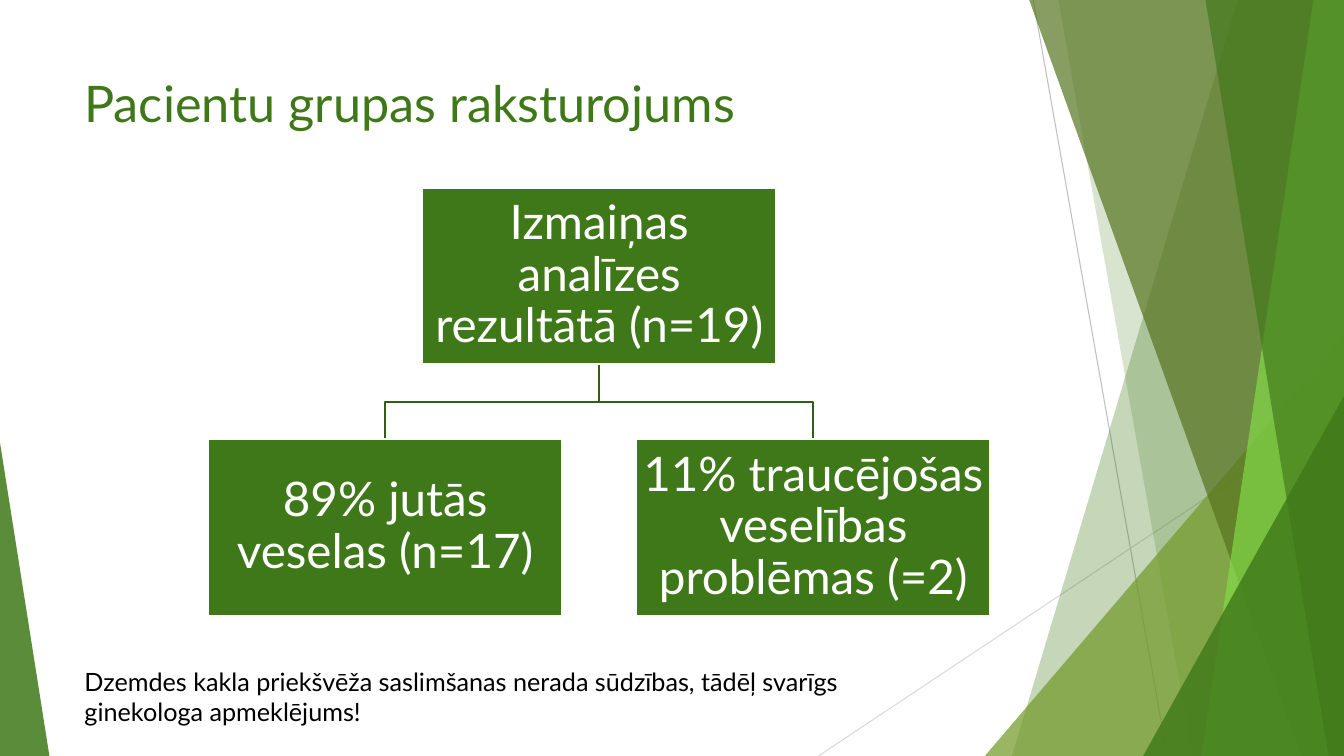
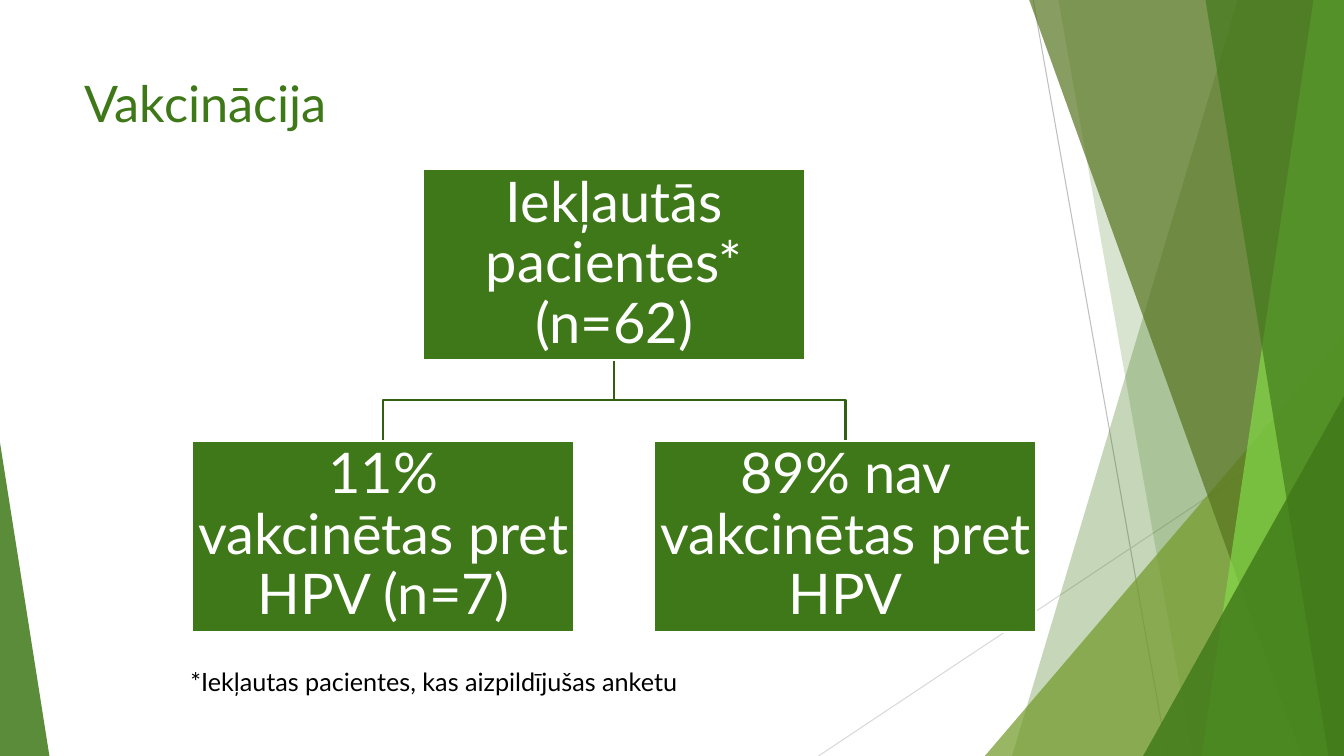
from lxml.etree import SubElement
from pptx import Presentation
from pptx.dml.color import RGBColor
from pptx.enum.shapes import MSO_CONNECTOR, MSO_SHAPE
from pptx.enum.text import MSO_ANCHOR, PP_ALIGN
from pptx.oxml.ns import qn
from pptx.util import Emu, Inches, Pt

GREEN = RGBColor(0x3F, 0x78, 0x18)
DARK_GREEN = RGBColor(0x32, 0x60, 0x13)
OLIVE = RGBColor(0x73, 0x9A, 0x29)
DARK_OLIVE = RGBColor(0x56, 0x74, 0x1F)
LIME = RGBColor(0x83, 0xDA, 0x48)
GREY = RGBColor(0xBF, 0xBF, 0xBF)
LIGHT_GREY = RGBColor(0xD9, 0xD9, 0xD9)
WHITE = RGBColor(0xFF, 0xFF, 0xFF)
BLACK = RGBColor(0x00, 0x00, 0x00)
FONT = "Lato"

# The slide is a grid of 100 columns by 100 rows.
COLUMN = Emu(121920)
ROW = Emu(68580)

# Lines: start column, start row, end column, end row, colour
BACKDROP_LINES = [
    (76.88, 0, 86.85, 100, GREY),
    (100, 53.73, 60.9, 100, LIGHT_GREY),
]
# Bands reach the right edge: top column, bottom column.
# Triangles stand on the bottom edge: left, top, right, apex position.
BACKDROP_FACETS = [
    ((92.1, 75.3), GREEN, 30),
    ((78.75, 88.73), GREEN, 20),
    ((73.28, 44.4, 100, 1), OLIVE, 72),
    ((76.58, 96.83), DARK_OLIVE, 70),
    ((97.73, 89.4), LIME, 70),
    ((89.7, 98.85), GREEN, 65),
    ((85.05, 52.4, 100, 1), GREEN, 80),
    ((0, 58.53, 3.68, 0), GREEN, 85),
]

# Box proportions, as shares of the box width
BOX_HEIGHT = 0.5
GAP = 0.21

SLIDES = [
    {
        "title": "Pacientu grupas raksturojums",
        "center": 44.59, "top": 24.8, "box_width": 26.33,
        "size": 34, "inset": 0.02,
        "parent": "Izmaiņas analīzes rezultātā (n=19)",
        "children": ["89% jutās veselas (n=17)",
                     "11% traucējošas veselības problēmas (=2)"],
        "note": "Dzemdes kakla priekšvēža saslimšanas nerada sūdzības, "
                "tādēļ svarīgs ginekologa apmeklējums!",
        "note_place": (5.55, 87.47, 65.18, 9.47),
    },
    {
        "title": "Vakcinācija",
        "center": 45.71, "top": 22.4, "box_width": 28.43,
        "size": 40, "inset": 0.03,
        "parent": "Iekļautās pacientes* (n=62)",
        "children": ["11% vakcinētas pret HPV (n=7)",
                     "89% nav vakcinētas pret HPV"],
        "note": "*Iekļautas pacientes, kas aizpildījušas anketu",
        "note_place": (13.43, 87.47, 51.53, 5.33),
    },
]


def add_outline(shapes, points, close):
    """Draw a freeform through points given in EMU."""
    points = [(round(x), round(y)) for x, y in points]
    builder = shapes.build_freeform(*points[0])
    builder.add_line_segments(points[1:], close=close)
    shape = builder.convert_to_shape()
    shape.shadow.inherit = False
    return shape


def write(shape, text, size, color):
    text_frame = shape.text_frame
    text_frame.text = text
    text_frame.word_wrap = True
    font = text_frame.paragraphs[0].runs[0].font
    font.name = FONT
    font.size = Pt(size)
    font.color.rgb = color
    return text_frame


presentation = Presentation()
presentation.slide_width = COLUMN * 100
presentation.slide_height = ROW * 100
blank = presentation.slide_layouts[6]
for placeholder in list(blank.placeholders):
    placeholder.element.getparent().remove(placeholder.element)
slides = [presentation.slides.add_slide(blank) for _ in SLIDES]

# Backdrop: drawn once, then moved to the layout that all slides share
shapes = slides[0].shapes
for x1, y1, x2, y2, color in BACKDROP_LINES:
    line = shapes.add_connector(
        MSO_CONNECTOR.STRAIGHT, round(x1 * COLUMN), round(y1 * ROW),
        round(x2 * COLUMN), round(y2 * ROW))
    line.line.color.rgb = color
    line.line.width = Pt(0.75)
    SubElement(line.element.spPr, qn("a:effectLst"))

for place, color, opacity in BACKDROP_FACETS:
    if len(place) == 2:
        top_x, bottom_x = place
        corners = [(top_x, 0), (100, 0), (100, 100), (bottom_x, 100)]
        facet = add_outline(
            shapes, [(x * COLUMN, y * ROW) for x, y in corners], close=True)
    else:
        left, top, right, apex = place
        facet = shapes.add_shape(
            MSO_SHAPE.ISOSCELES_TRIANGLE, round(left * COLUMN),
            round(top * ROW), round((right - left) * COLUMN),
            round((100 - top) * ROW))
        facet.adjustments[0] = apex
        facet.shadow.inherit = False
    facet.fill.solid()
    facet.fill.fore_color.rgb = color
    facet.line.fill.background()
    color_element = facet.element.spPr.find(
        qn("a:solidFill") + "/" + qn("a:srgbClr"))
    SubElement(color_element, qn("a:alpha"), val=str(opacity * 1000))

for shape in list(shapes):
    blank.shapes.element.append(shape.element)

for slide, content in zip(slides, SLIDES):
    shapes = slide.shapes
    title = shapes.add_textbox(
        round(5.55 * COLUMN), round(8.93 * ROW),
        round(70.5 * COLUMN), round(19.2 * ROW))
    write(title, content["title"], 36, GREEN)

    # Tree: one parent box above two children
    width = content["box_width"] * COLUMN
    height = width * BOX_HEIGHT
    gap = width * GAP
    center = content["center"] * COLUMN
    parent_top = content["top"] * ROW
    parent_bottom = parent_top + height
    child_top = parent_bottom + gap
    middle = parent_bottom + gap / 2
    reach = (width + gap) / 2
    child_centers = [center - reach, center + reach]

    for child_center in child_centers:
        branch = add_outline(
            shapes, [(center, parent_bottom), (center, middle),
                     (child_center, middle), (child_center, child_top)],
            close=False)
        branch.fill.background()
        branch.line.color.rgb = DARK_GREEN
        branch.line.width = Pt(1.5)

    boxes = [(content["parent"], center, parent_top)]
    for text, child_center in zip(content["children"], child_centers):
        boxes.append((text, child_center, child_top))
    for text, box_center, top in boxes:
        box = shapes.add_shape(
            MSO_SHAPE.RECTANGLE, round(box_center - width / 2), round(top),
            round(width), round(height))
        box.shadow.inherit = False
        box.fill.solid()
        box.fill.fore_color.rgb = GREEN
        box.line.color.rgb = WHITE
        box.line.width = Pt(1.5)
        text_frame = write(box, text, content["size"], WHITE)
        text_frame.vertical_anchor = MSO_ANCHOR.MIDDLE
        text_frame.margin_left = text_frame.margin_right = Inches(content["inset"])
        text_frame.margin_top = text_frame.margin_bottom = Inches(content["inset"])
        text_frame.paragraphs[0].alignment = PP_ALIGN.CENTER
        text_frame.paragraphs[0].line_spacing = 0.9

    left, top, note_width, note_height = content["note_place"]
    note = shapes.add_textbox(
        round(left * COLUMN), round(top * ROW),
        round(note_width * COLUMN), round(note_height * ROW))
    write(note, content["note"], 18, BLACK)

presentation.save("out.pptx")
